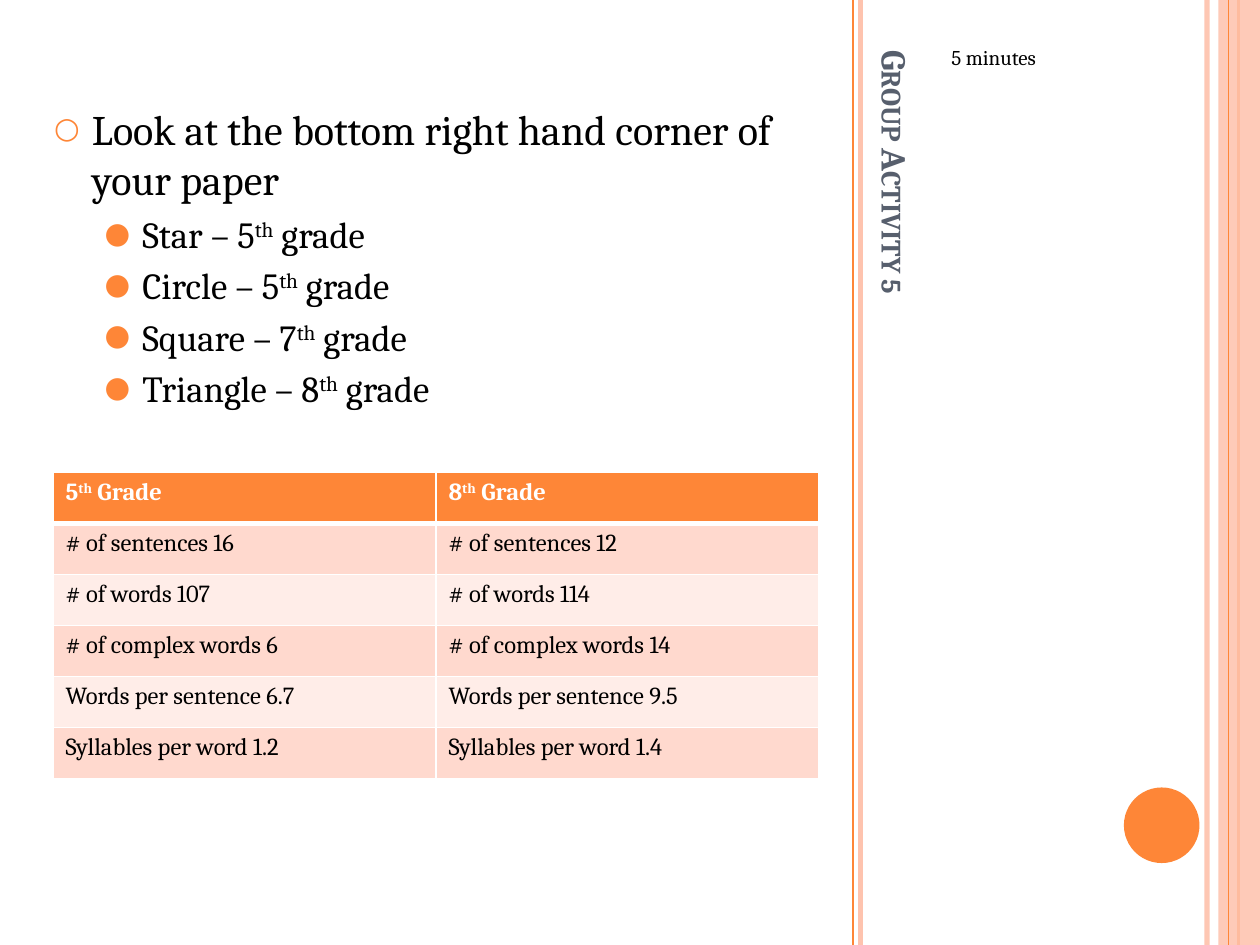
from dataclasses import dataclass

from lxml.etree import SubElement
from pptx import Presentation
from pptx.dml.color import RGBColor
from pptx.enum.shapes import MSO_CONNECTOR, MSO_SHAPE
from pptx.enum.text import MSO_ANCHOR, MSO_AUTO_SIZE, PP_ALIGN
from pptx.oxml.ns import qn
from pptx.util import Inches, Pt


@dataclass(frozen=True)
class Theme:
    font: str = "Cambria"
    accent: str = "FE8637"
    pale: str = "FEC3AE"
    heading: str = "575F6D"
    text: str = "000000"
    white: str = "FFFFFF"
    bands: tuple = ("FFD9CE", "FFEDE8")
    title_size: float = 20
    body_size: float = 24
    sub_size: float = 21
    note_size: float = 12
    table_size: float = 14


THEME = Theme()
GRADES = ["Star – 5^th^ grade", "Circle – 5^th^ grade",
          "Square – 7^th^ grade", "Triangle – 8^th^ grade"]
TABLE_ROWS = [
    ("5^th^ Grade", "8^th^ Grade"),
    ("# of sentences 16", "# of sentences 12"),
    ("# of words 107", "# of words 114"),
    ("# of complex words 6", "# of complex words 14"),
    ("Words per sentence 6.7", "Words per sentence 9.5"),
    ("Syllables per word 1.2", "Syllables per word 1.4"),
]


def rgb(value):
    return RGBColor.from_string(value)


def set_all(target, values):
    for name, value in values.items():
        setattr(target, name, value)


def place(shape, box):
    names = ("left", "top", "width", "height")
    set_all(shape, dict(zip(names, (Inches(length) for length in box))))


def set_alpha(fill_parent, percent):
    color = next(fill_parent.iter(qn("a:srgbClr")))
    SubElement(color, qn("a:alpha"), val=str(percent * 1000))


def write(para, text, size, color, bold=False):
    """Fill a paragraph; pieces between ^ marks are superscript."""
    for index, piece in enumerate(text.split("^")):
        span = para.add_run()
        span.text = piece
        set_all(span.font, {"name": THEME.font, "size": Pt(size), "bold": bold})
        span.font.color.rgb = rgb(color)
        if index % 2:
            span.font._element.set("baseline", "30000")


def set_bullet(para, char=None, percent=100, left=0, hanging=0):
    props = para._p.get_or_add_pPr()
    props.set("marL", str(Inches(left)))
    props.set("indent", str(-Inches(hanging)))
    if char is None:
        SubElement(props, qn("a:buNone"))
        return
    color = SubElement(props, qn("a:buClr"))
    SubElement(color, qn("a:srgbClr"), val=THEME.accent)
    SubElement(props, qn("a:buSzPct"), val=str(percent * 1000))
    SubElement(props, qn("a:buFont"), typeface=THEME.font)
    SubElement(props, qn("a:buChar"), char=char)


def add_rule(page, x, height, color, width, opacity=100):
    rule = page.shapes.add_connector(
        MSO_CONNECTOR.STRAIGHT, Inches(x), 0, Inches(x), Inches(height))
    rule.line.color.rgb = rgb(color)
    rule.line.width = Pt(width)
    SubElement(rule._element.spPr, qn("a:effectLst"))
    if opacity < 100:
        set_alpha(rule._element.spPr, opacity)


def add_solid(page, kind, box, color, opacity=100):
    shape = page.shapes.add_shape(kind, *(Inches(length) for length in box))
    shape.shadow.inherit = False
    shape.fill.solid()
    shape.fill.fore_color.rgb = rgb(color)
    shape.line.fill.background()
    if opacity < 100:
        set_alpha(shape._element.spPr, opacity)


def add_decoration(page, box):
    """Vertical stripes and the corner disc, inside the right-hand area."""
    left, top, width, height = box
    right = left + width
    add_rule(page, right - 0.42, height, THEME.pale, 3, 93)
    add_rule(page, left + 0.06, height, THEME.pale, 3)
    add_rule(page, left, height, THEME.accent, 1)
    add_rule(page, right - 0.17, height, THEME.accent, 1.5)
    add_solid(page, MSO_SHAPE.RECTANGLE,
              (right - 0.33, top, 0.33, height), THEME.pale, 87)
    add_rule(page, right - 0.25, height, THEME.accent, 0.75)
    add_solid(page, MSO_SHAPE.OVAL,
              (right - 1.08, top + 6.25, 0.6, 0.6), THEME.accent)


def fill_title(title, box):
    place(title, box)
    title.rotation = 90
    frame = title.text_frame
    set_all(frame, {"vertical_anchor": MSO_ANCHOR.BOTTOM, "word_wrap": True,
                    "auto_size": MSO_AUTO_SIZE.NONE})
    para = frame.paragraphs[0]
    para.alignment = PP_ALIGN.LEFT
    write(para, "Group Activity 5", THEME.title_size, THEME.heading, True)
    para.runs[0].font._element.set("cap", "small")


def fill_note(body, box):
    place(body, box)
    body.text_frame.auto_size = MSO_AUTO_SIZE.NONE
    para = body.text_frame.paragraphs[0]
    set_all(para, {"space_before": Pt(4), "space_after": Pt(10)})
    set_bullet(para)
    write(para, "5 minutes", THEME.note_size, THEME.text)


def fill_list(body, box):
    place(body, box)
    frame = body.text_frame
    set_all(frame, {"auto_size": MSO_AUTO_SIZE.NONE, "margin_top": Inches(0.52)})
    lead = frame.paragraphs[0]
    lead.space_before = Pt(0)
    set_bullet(lead, "○", 70, 0.3, 0.3)
    write(lead, "Look at the bottom right hand corner of your paper",
          THEME.body_size, THEME.text)
    for grade in GRADES:
        para = frame.add_paragraph()
        set_all(para, {"level": 1, "space_before": Pt(THEME.sub_size * 0.2)})
        set_bullet(para, "●", 80, 0.7, 0.3)
        write(para, grade, THEME.sub_size, THEME.text)


def set_borders(cell, widths):
    props = cell._tc.get_or_add_tcPr()
    for side, width in widths.items():
        line = SubElement(props, qn(f"a:ln{side}"), w=str(Pt(width)))
        fill = SubElement(line, qn("a:solidFill"))
        SubElement(fill, qn("a:srgbClr"), val=THEME.white)


def add_grade_table(page, box):
    table = page.shapes.add_table(
        len(TABLE_ROWS), len(TABLE_ROWS[0]),
        *(Inches(length) for length in box)).table
    for row, texts in enumerate(TABLE_ROWS):
        header = row == 0
        for column, text in enumerate(texts):
            cell = table.cell(row, column)
            set_borders(cell, {"L": 1, "R": 1, "T": 3 if row == 1 else 1,
                               "B": 3 if header else 1})
            cell.fill.solid()
            color = THEME.accent if header else THEME.bands[(row - 1) % 2]
            cell.fill.fore_color.rgb = rgb(color)
            write(cell.text_frame.paragraphs[0], text, THEME.table_size,
                  THEME.white if header else THEME.text, header)


def main():
    deck = Presentation()
    set_all(deck, {"slide_width": Inches(10), "slide_height": Inches(7.5)})
    page = deck.slides.add_slide(deck.slide_layouts.get_by_name("Two Content"))
    add_decoration(page, (6.77, 0, 3.23, 7.5))
    fill_title(page.shapes.title, (3.69, 3.5, 6.9, 0.5))
    fill_note(page.placeholders[1], (7.45, 0.3, 1.67, 5.45))
    fill_list(page.placeholders[2], (0.33, 0.3, 6.17, 6.92))
    add_grade_table(page, (0.42, 3.75, 6.08, 2.43))
    deck.save("out.pptx")


if __name__ == "__main__":
    main()
